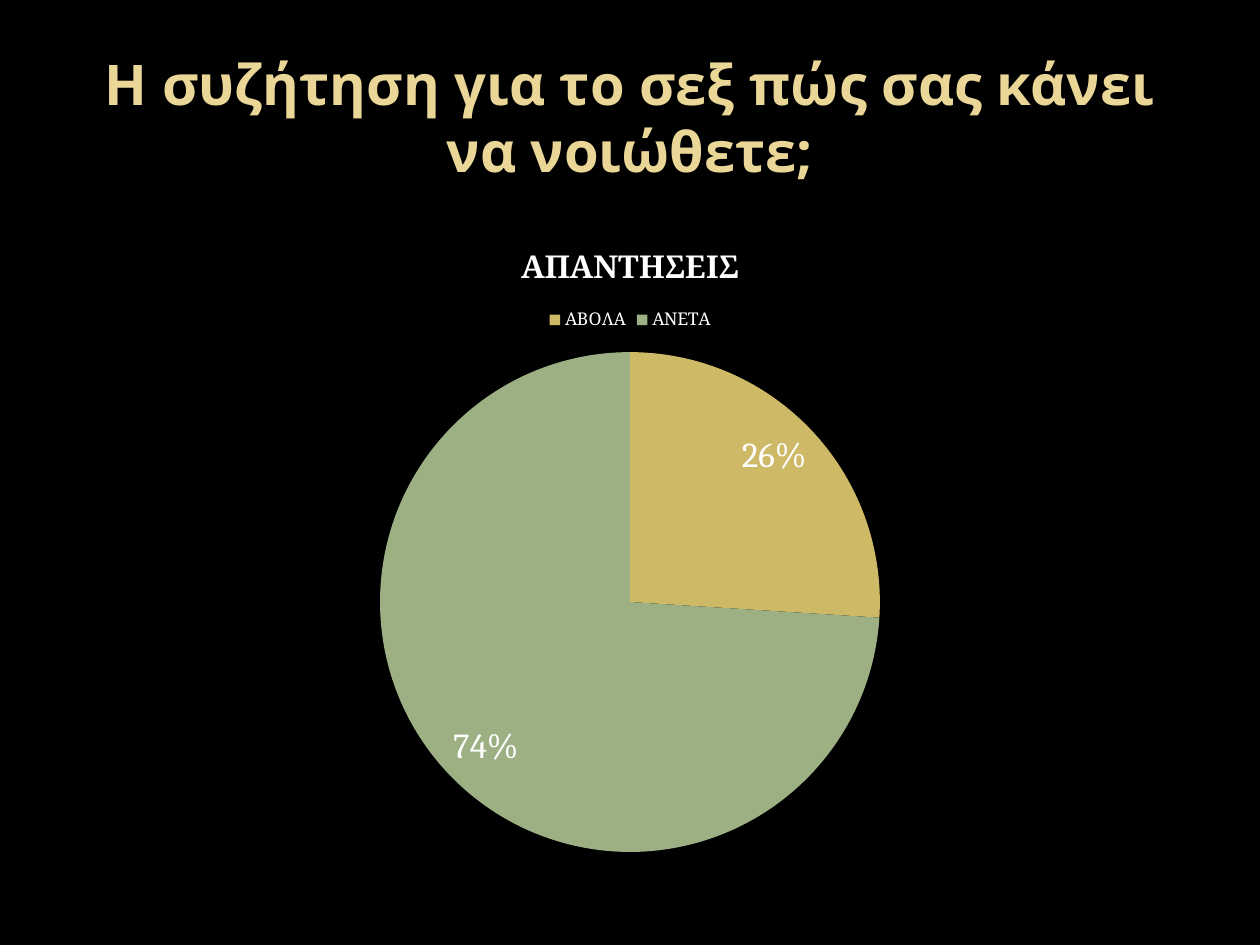
from pptx import Presentation
from pptx.chart.data import CategoryChartData
from pptx.dml.color import RGBColor
from pptx.enum.chart import XL_CHART_TYPE, XL_LABEL_POSITION, XL_LEGEND_POSITION
from pptx.enum.text import MSO_ANCHOR, PP_ALIGN
from pptx.util import Inches, Pt

PIE = XL_CHART_TYPE.PIE
LEGEND_TOP = XL_LEGEND_POSITION.TOP
INSIDE_END = XL_LABEL_POSITION.INSIDE_END
MIDDLE = MSO_ANCHOR.MIDDLE
CENTER = PP_ALIGN.CENTER

COLORS = {
    "background": "000000",
    "title": "EAD696",
    "text": "FFFFFF",
    "ΑΒΟΛΑ": "CEB966",
    "ΑΝΕΤΑ": "9CB084",
}
ANSWERS = {"ΑΒΟΛΑ": 26, "ΑΝΕΤΑ": 74}
TITLE_FONT = "Noto Sans"
CHART_FONT = "Cambria"


def color(name):
    return RGBColor.from_string(COLORS[name])


def style_font(font, name, size, color_name, bold=False):
    font.name = name
    font.size = Pt(size)
    font.bold = bold
    font.color.rgb = color(color_name)


def add_question(page, box, text):
    frame = page.shapes.add_textbox(*box).text_frame
    frame.word_wrap = True
    frame.vertical_anchor = MIDDLE
    frame.text = text
    para = frame.paragraphs[0]
    para.alignment = CENTER
    style_font(para.runs[0].font, TITLE_FONT, 32, "title", bold=True)


def add_answers_chart(page, box, title, answers):
    data = CategoryChartData()
    data.categories = list(answers)
    data.add_series(title, list(answers.values()))
    chart = page.shapes.add_chart(PIE, *box, data).chart
    style_font(chart.font, CHART_FONT, 10, "text")

    # Chart title and legend
    chart.has_title = True
    heading = chart.chart_title.text_frame
    heading.text = title
    style_font(heading.paragraphs[0].runs[0].font, CHART_FONT, 18, "text", bold=True)
    chart.has_legend = True
    chart.legend.position = LEGEND_TOP
    chart.legend.include_in_layout = False

    # Slices
    plot = chart.plots[0]
    plot.vary_by_categories = True
    series = plot.series[0]
    for index, answer in enumerate(answers):
        fill = series.points[index].format.fill
        fill.solid()
        fill.fore_color.rgb = color(answer)

    # Percentage labels
    labels = series.data_labels
    labels.show_percentage = True
    labels.show_value = False
    labels.number_format = "0%"
    labels.number_format_is_linked = False
    labels.position = INSIDE_END
    style_font(labels.font, CHART_FONT, 20, "text")


def main():
    deck = Presentation()
    deck.slide_width = Inches(10)
    deck.slide_height = Inches(7.5)
    page = deck.slides.add_slide(deck.slide_layouts[6])
    page.background.fill.solid()
    page.background.fill.fore_color.rgb = color("background")

    left, width = Inches(0.5), Inches(9)
    add_question(page, (left, Inches(0.3), width, Inches(1.25)),
                 "Η συζήτηση για το σεξ πώς σας κάνει να νοιώθετε;")
    add_answers_chart(page, (left, Inches(1.75), width, Inches(5.15)),
                      "ΑΠΑΝΤΗΣΕΙΣ", ANSWERS)
    deck.save("out.pptx")


if __name__ == "__main__":
    main()
